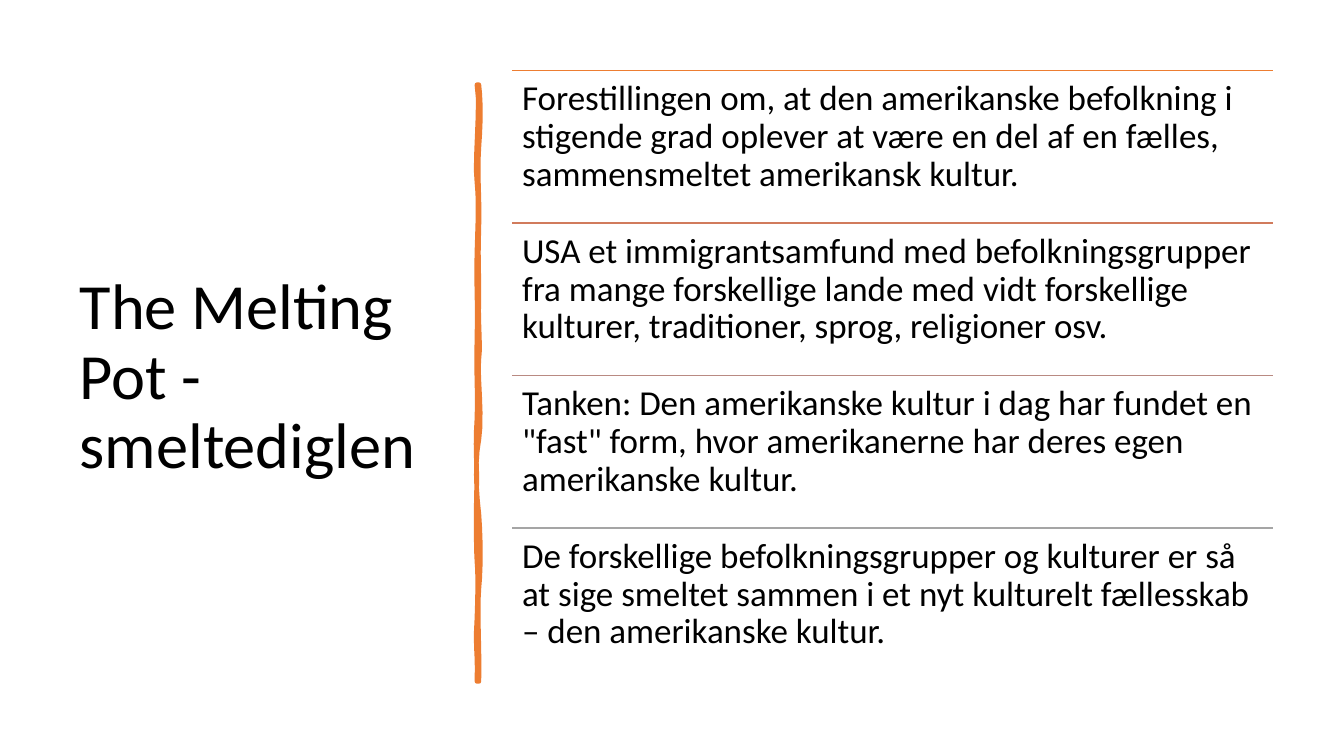
from dataclasses import dataclass

from pptx import Presentation
from pptx.dml.color import RGBColor as Rgb
from pptx.enum.shapes import MSO_CONNECTOR as Link
from pptx.enum.text import MSO_ANCHOR as Anchor, MSO_AUTO_SIZE as Fit, PP_ALIGN as Align
from pptx.oxml.ns import qn
from pptx.util import Inches, Pt
from lxml.etree import SubElement as Sub


@dataclass(frozen=True)
class Theme:
    """Holds the colours, type sizes and font of the slide."""
    font: str = "Calibri"
    ink: str = "000000"
    brush: str = "ED7D31"
    rules: tuple = ("ED7D31", "D17B5C", "B98A82", "A5A5A5")
    head: float = 46
    body: float = 25
    gap: float = 8.75
    lead: float = 0.9


LOOK = Theme()
WIDE, HIGH = Inches(13.33), Inches(7.5)
CELL = HIGH // 750
LEFT, TOP, SPAN, ROW = 508, 70, 755, 151.3
TITLE = (69, 70, 374, 611)
START = (475, 84)
CURVES = (
    (477, 102, 477, 119, 475, 146), (473, 173, 476, 195, 475, 226),
    (474, 257, 475, 262, 475, 294), (474, 325, 477, 342, 475, 356),
    (473, 370, 479, 414, 475, 436), (471, 457, 472, 484, 475, 510),
    (477, 536, 477, 564, 475, 584), (473, 603, 476, 650, 475, 676),
    (474, 676, 473, 676, 473, 676), (474, 646, 471, 644, 473, 613),
    (474, 583, 474, 570, 473, 557), (472, 544, 472, 495, 473, 477),
    (473, 459, 471, 445, 473, 415), (474, 386, 472, 373, 473, 335),
    (474, 298, 472, 281, 473, 250), (474, 218, 475, 200, 473, 181),
    (470, 163, 477, 104, 473, 84),
)
HEAD = "The Melting Pot - smeltediglen"
ITEMS = (
    "Forestillingen om, at den amerikanske befolkning i stigende grad oplever "
    "at være en del af en fælles, sammensmeltet amerikansk kultur.",
    "USA et immigrantsamfund med befolkningsgrupper fra mange forskellige lande "
    "med vidt forskellige kulturer, traditioner, sprog, religioner osv.",
    "Tanken: Den amerikanske kultur i dag har fundet en \"fast\" form, hvor "
    "amerikanerne har deres egen amerikanske kultur.",
    "De forskellige befolkningsgrupper og kulturer er så at sige smeltet sammen "
    "i et nyt kulturelt fællesskab – den amerikanske kultur.",
)


def cells(*nums):
    """Turn grid cells into slide lengths."""
    return [round(n * CELL) for n in nums]


def write(frame, text, size, anchor):
    """Put one left-aligned run of text into a frame."""
    frame.word_wrap = True
    frame.auto_size = Fit.NONE
    frame.vertical_anchor = anchor
    para = frame.paragraphs[0]
    para.alignment = Align.LEFT
    para.line_spacing = LOOK.lead
    run = para.add_run()
    run.text = text
    run.font.name = LOOK.font
    run.font.size = Pt(size)
    run.font.color.rgb = Rgb.from_string(LOOK.ink)
    return para


def title(slide):
    """Place and fill the title."""
    shape = slide.shapes.title
    shape.left, shape.top, shape.width, shape.height = cells(*TITLE)
    write(shape.text_frame, HEAD, LOOK.head, Anchor.MIDDLE)


def bend(start, curve, steps=6):
    """List points along one cubic curve."""
    ends = (start, curve[:2], curve[2:4], curve[4:])
    points = []
    for step in range(1, steps + 1):
        t = step / steps
        parts = ((1 - t) ** 3, 3 * t * (1 - t) ** 2, 3 * t * t * (1 - t), t ** 3)
        points.append(cells(*(sum(p * e[i] for p, e in zip(parts, ends)) for i in (0, 1))))
    return points


def brush(slide):
    """Draw the upright brush stroke."""
    form = slide.shapes.build_freeform(*cells(*START))
    start = START
    for curve in CURVES:
        form.add_line_segments(bend(start, curve), close=False)
        start = curve[4:]
    form.add_line_segments([cells(*START)], close=True)
    shape = form.convert_to_shape()
    shape.shadow.inherit = False
    shape.fill.solid()
    shape.fill.fore_color.rgb = Rgb.from_string(LOOK.brush)
    shape.line.color.rgb = Rgb.from_string(LOOK.brush)
    shape.line.width = Pt(3.25)
    Sub(shape.line._get_or_add_ln(), qn("a:round"))


def rule(slide, top, color):
    """Draw the thin line above an item."""
    line = slide.shapes.add_connector(Link.STRAIGHT, *cells(LEFT, top, LEFT + SPAN, top))
    line.line.color.rgb = Rgb.from_string(color)
    line.line.width = Pt(1)
    Sub(line._element.spPr, qn("a:effectLst"))


def item(slide, top, text):
    """Write one item in its row."""
    frame = slide.shapes.add_textbox(*cells(LEFT, top, SPAN, ROW)).text_frame
    frame.margin_left = frame.margin_right = Inches(0.1)
    frame.margin_top = frame.margin_bottom = Inches(0.1)
    write(frame, text, LOOK.body, Anchor.TOP).space_after = Pt(LOOK.gap)


def main():
    """Build and save the slide."""
    deck = Presentation()
    deck.slide_width, deck.slide_height = WIDE, HIGH
    slide = deck.slides.add_slide(deck.slide_layouts[5])
    title(slide)
    brush(slide)
    for row, (text, color) in enumerate(zip(ITEMS, LOOK.rules)):
        top = TOP + row * ROW
        rule(slide, top, color)
        item(slide, top, text)
    deck.save("out.pptx")


if __name__ == "__main__":
    main()
